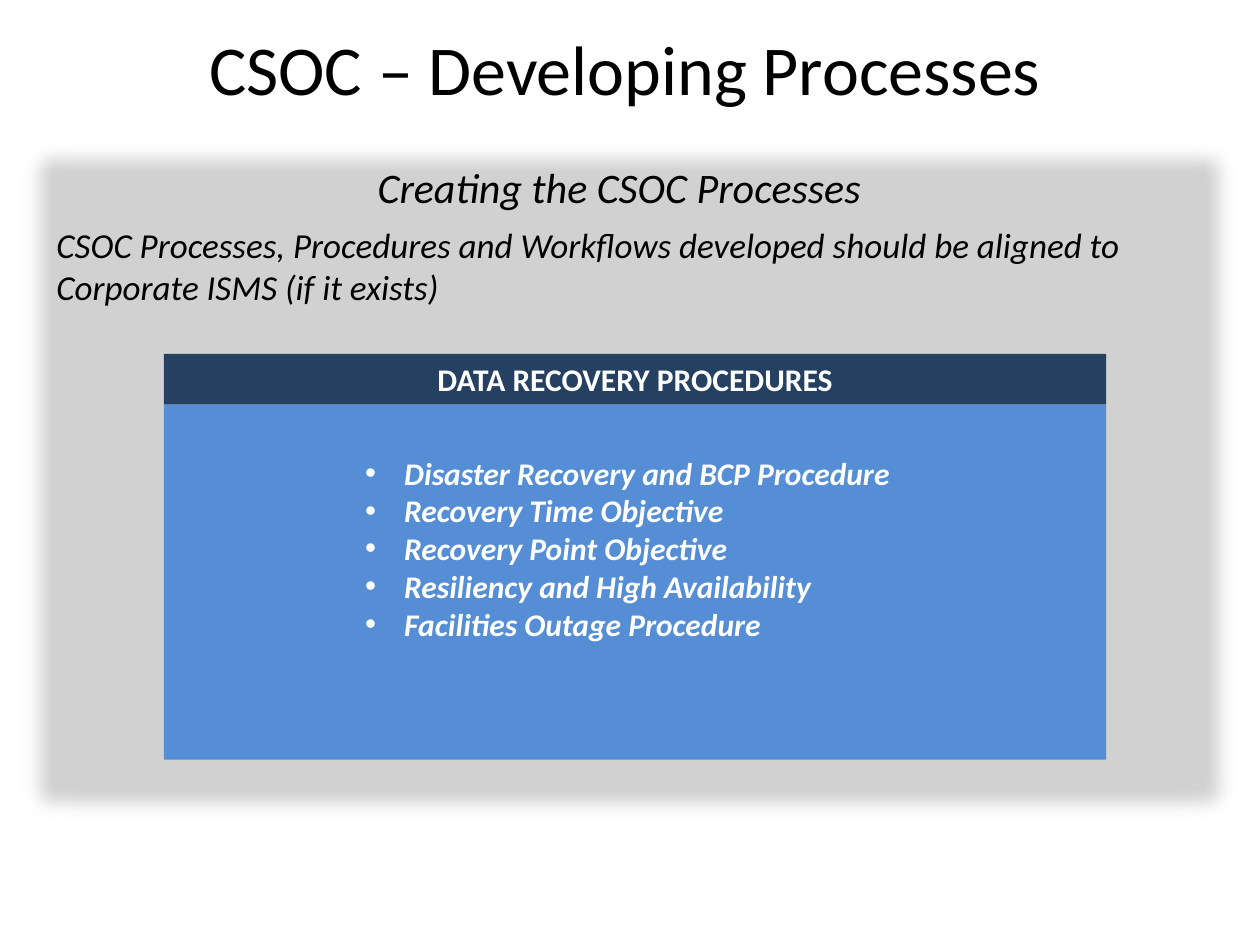
from lxml import etree
from pptx import Presentation
from pptx import util as u
from pptx.dml.color import RGBColor
from pptx.enum import shapes, text
from pptx.oxml.ns import qn

FONT = "Calibri"
BLACK, WHITE = "000000", "FFFFFF"
PANEL_GREY, HEADER_NAVY, BODY_BLUE = "D1D1D1", "254061", "558ED5"
PROCEDURES = [
    "Disaster Recovery and BCP Procedure",
    "Recovery Time Objective",
    "Recovery Point Objective",
    "Resiliency and High Availability",
    "Facilities Outage Procedure",
]


def color(hex_value):
    return RGBColor.from_string(hex_value)


def box(left, top, width, height):
    return [u.Inches(value) for value in (left, top, width, height)]


def add_run(paragraph, words, size, hex_value, bold=False, italic=False):
    run = paragraph.add_run()
    run.text = words
    font = run.font
    font.name, font.size = FONT, u.Pt(size)
    font.bold, font.italic = bold, italic
    font.color.rgb = color(hex_value)


def add_rectangle(slide, place, fill):
    shape = slide.shapes.add_shape(shapes.MSO_SHAPE.RECTANGLE, *box(*place))
    shape.shadow.inherit = False
    shape.fill.solid()
    shape.fill.fore_color.rgb = color(fill)
    shape.line.fill.background()
    return shape


def soften_edges(shape, radius):
    effects = shape._element.spPr.find(qn("a:effectLst"))
    etree.SubElement(effects, qn("a:softEdge"), rad=str(u.Pt(radius)))


def add_text_frame(slide, place):
    frame = slide.shapes.add_textbox(*box(*place)).text_frame
    frame.word_wrap = True
    return frame


def next_paragraph(frame, index):
    return frame.paragraphs[0] if index == 0 else frame.add_paragraph()


def add_bullet(paragraph, indent):
    properties = paragraph._p.get_or_add_pPr()
    properties.set("marL", str(u.Inches(indent)))
    properties.set("indent", str(-u.Inches(indent)))
    etree.SubElement(properties, qn("a:buFont"), typeface="Arial")
    etree.SubElement(properties, qn("a:buChar"), char="•")


def set_title(slide, words):
    title = slide.shapes.title
    title.left, title.top, title.width, title.height = box(0.43, 0.14, 9.06, 0.79)
    title.text_frame.vertical_anchor = text.MSO_ANCHOR.MIDDLE
    paragraph = title.text_frame.paragraphs[0]
    paragraph.alignment = text.PP_ALIGN.CENTER
    add_run(paragraph, words, 40, BLACK)


def add_introduction(slide):
    frame = add_text_frame(slide, (0.35, 1.23, 9.13, 1.3))
    heading = frame.paragraphs[0]
    heading.alignment = text.PP_ALIGN.CENTER
    add_run(heading, "Creating the CSOC Processes", 24, BLACK, italic=True)
    statement = frame.add_paragraph()
    statement.space_before = u.Pt(7)
    add_run(statement, "CSOC Processes, Procedures and Workflows developed should be "
            "aligned to Corporate ISMS (if it exists)", 20, BLACK, italic=True)


def add_procedure_card(slide):
    left, top, width, header_height = 1.3, 2.81, 7.48, 0.4
    add_rectangle(slide, (left, top + header_height, width, 2.82), BODY_BLUE)
    header = add_rectangle(slide, (left, top, width, header_height), HEADER_NAVY)
    header.text_frame.vertical_anchor = text.MSO_ANCHOR.MIDDLE
    paragraph = header.text_frame.paragraphs[0]
    paragraph.alignment = text.PP_ALIGN.CENTER
    add_run(paragraph, "DATA RECOVERY PROCEDURES", 18, WHITE, bold=True)

    frame = add_text_frame(slide, (2.8, 3.55, 5, 1.62))
    for index, procedure in enumerate(PROCEDURES):
        paragraph = next_paragraph(frame, index)
        add_bullet(paragraph, 0.31)
        add_run(paragraph, procedure, 18, WHITE, bold=True, italic=True)


def main():
    presentation = Presentation()
    presentation.slide_width = u.Inches(10)
    presentation.slide_height = u.Inches(7.5)
    slide = presentation.slides.add_slide(presentation.slide_layouts[5])
    set_title(slide, "CSOC – Developing Processes")
    panel = add_rectangle(slide, (0.12, 1.07, 9.76, 5.51), PANEL_GREY)
    soften_edges(panel, 12.5)
    add_procedure_card(slide)
    add_introduction(slide)
    presentation.save("out.pptx")


if __name__ == "__main__":
    main()
